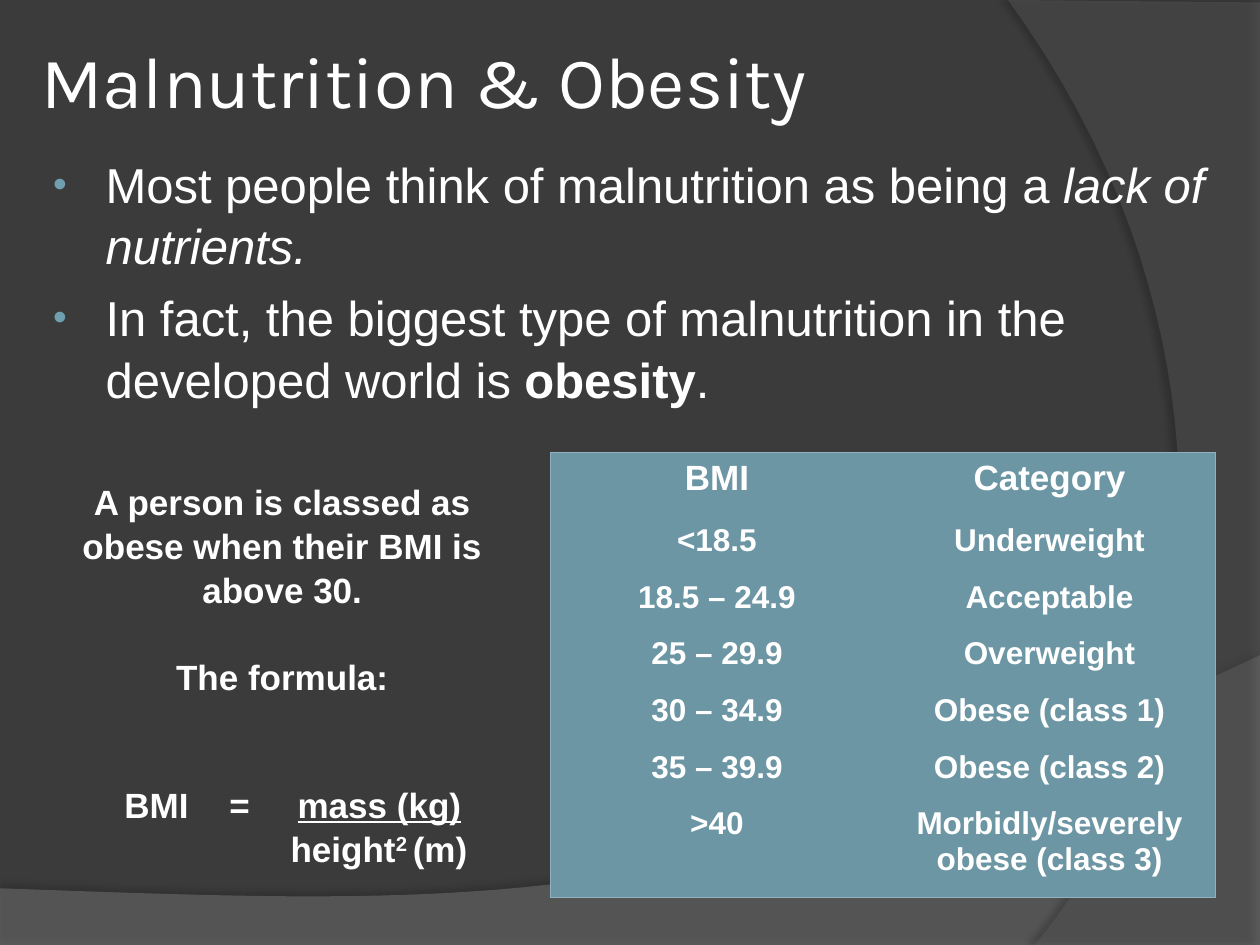
import lxml.etree
import pptx
import pptx.dml.color
import pptx.enum.text
import pptx.oxml
import pptx.oxml.ns
import pptx.util

Pt = pptx.util.Pt
ALIGN = pptx.enum.text.PP_ALIGN
ANCHOR = pptx.enum.text.MSO_ANCHOR
NAMESPACE = pptx.oxml.ns.nsdecls("a")

COLORS = {
    "background": "3B3B3B",
    "wave": "7F7F7F",
    "arc": "5E5E5E",
    "shadow": "000000",
    "text": "FFFFFF",
    "bullet": "6EA0B0",
    "table": "6C96A4",
    "border": "90B2C0",
}


def rgb(name):
    return pptx.dml.color.RGBColor.from_string(COLORS[name])


def add_text(paragraph, text, size=20, font="Arial", bold=False, italic=False,
             underline=False, baseline=None):
    run = paragraph.add_run()
    run.text = text
    run.font.size = Pt(size)
    run.font.name = font
    run.font.bold = bold
    run.font.italic = italic
    run.font.underline = underline
    run.font.color.rgb = rgb("text")
    if baseline:
        run.font._element.set("baseline", str(baseline))


presentation = pptx.Presentation()
presentation.slide_width, presentation.slide_height = Pt(720), Pt(540)
slide = presentation.slides.add_slide(presentation.slide_layouts[1])
slide.background.fill.solid()
slide.background.fill.fore_color.rgb = rgb("background")

# Background curves: straight corners, then one Bezier back to the start.
# Each has colour, opacity, corners, control points, end, and shadow
# (opacity, blur, distance, direction).
curves = [
    ("wave", 45, [(0, 507.6), (0, 540.72), (720, 540.72), (720, 374.4)],
     [(402.48, 524.88), (281.52, 517.68)], (0, 507.6), (35, 4, 3.5, 270)),
    ("arc", 40, [(720, 1.44), (720, 540), (591.12, 540)],
     [(673.2, 445.68), (732.96, 216)], (576, 0), (45, 4, 4, 180)),
]
STEPS = 40
for index, (color, opacity, corners, controls, end, shadow) in enumerate(curves):
    bezier = [corners[-1], *controls, end]
    points = list(corners[1:])
    for step in range(1, STEPS + 1):
        t = step / STEPS
        weights = [(1 - t) ** 3, 3 * t * (1 - t) ** 2, 3 * t ** 2 * (1 - t), t ** 3]
        points.append(tuple(sum(w * p[axis] for w, p in zip(weights, bezier))
                            for axis in (0, 1)))
    builder = slide.shapes.build_freeform(Pt(corners[0][0]), Pt(corners[0][1]))
    builder.add_line_segments([(Pt(x), Pt(y)) for x, y in points], close=True)
    shape = builder.convert_to_shape()
    shape.fill.solid()
    shape.fill.fore_color.rgb = rgb(color)
    shape.line.fill.background()
    fill_color = shape.element.spPr.find(".//" + pptx.oxml.ns.qn("a:srgbClr"))
    lxml.etree.SubElement(fill_color, pptx.oxml.ns.qn("a:alpha"), val=str(opacity * 1000))
    shadow_opacity, blur, distance, direction = shadow
    shape.element.spPr.append(pptx.oxml.parse_xml(
        f'<a:effectLst {NAMESPACE}><a:outerShdw blurRad="{Pt(blur)}" dist="{Pt(distance)}" '
        f'dir="{direction * 60000}" algn="ctr" rotWithShape="0">'
        f'<a:srgbClr val="{COLORS["shadow"]}"><a:alpha val="{shadow_opacity * 1000}"/>'
        f'</a:srgbClr></a:outerShdw></a:effectLst>'))
    slide.shapes.element.insert(2 + index, shape.element)

# Title
title = slide.shapes.title
title.left, title.top, title.width, title.height = Pt(20.16), Pt(15.12), Pt(680.4), Pt(61.2)
frame = title.text_frame
frame.auto_size = pptx.enum.text.MSO_AUTO_SIZE.NONE
frame.vertical_anchor = ANCHOR.MIDDLE
frame.margin_left = frame.margin_right = frame.margin_top = frame.margin_bottom = Pt(3.6)
frame.paragraphs[0].alignment = ALIGN.LEFT
add_text(frame.paragraphs[0], "Malnutrition & Obesity", size=41.4, font="Karla")

# Bulleted list
body = slide.placeholders[1]
body.left, body.top, body.width, body.height = Pt(20.16), Pt(82.8), Pt(680.4), Pt(442.08)
body.text_frame.auto_size = pptx.enum.text.MSO_AUTO_SIZE.NONE
bullets = [
    [("Most people think of malnutrition as being a ", {}),
     ("lack of nutrients.", {"italic": True})],
    [("In fact, the biggest type of malnutrition in the developed world is ", {}),
     ("obesity", {"bold": True}), (".", {})],
]
for index, runs in enumerate(bullets):
    paragraph = (body.text_frame.add_paragraph() if index
                 else body.text_frame.paragraphs[0])
    paragraph.space_before = Pt(5.6)
    paragraph.line_spacing = 1.05
    properties = paragraph._p.get_or_add_pPr()
    properties.set("marL", str(Pt(33)))
    properties.set("indent", str(Pt(-30)))
    for xml in (f'<a:buClr {NAMESPACE}><a:srgbClr val="{COLORS["bullet"]}"/></a:buClr>',
                f'<a:buSzPct {NAMESPACE} val="80000"/>',
                f'<a:buFont {NAMESPACE} typeface="Arial"/>',
                f'<a:buChar {NAMESPACE} char="•"/>'):
        properties.append(pptx.oxml.parse_xml(xml))
    for text, style in runs:
        add_text(paragraph, text, size=28, **style)

# BMI table with an outer border only
rows = [
    ("BMI", "Category"),
    ("<18.5", "Underweight"),
    ("18.5 – 24.9", "Acceptable"),
    ("25 – 29.9", "Overweight"),
    ("30 – 34.9", "Obese (class 1)"),
    ("35 – 39.9", "Obese (class 2)"),
    (">40", "Morbidly/severely obese (class 3)"),
]
heights = [36.72] + [32.4] * 5 + [55.44]
table = slide.shapes.add_table(len(rows), 2, Pt(314.64), Pt(258.48),
                               Pt(380.16), Pt(sum(heights))).table
table.first_row = table.horz_banding = False
for row, (texts, height) in enumerate(zip(rows, heights)):
    table.rows[row].height = Pt(height)
    for column, text in enumerate(texts):
        cell = table.cell(row, column)
        paragraph = cell.text_frame.paragraphs[0]
        paragraph.alignment = ALIGN.CENTER
        size = 18 if row else 20
        paragraph.space_before = Pt(size * 0.2)
        add_text(paragraph, text, size=size, bold=True)
        outer = {"lnL": column == 0, "lnR": column == 1,
                 "lnT": row == 0, "lnB": row == len(rows) - 1}
        for side, visible in outer.items():
            fill = (f'<a:solidFill><a:srgbClr val="{COLORS["border"]}"/></a:solidFill>'
                    if visible else "<a:noFill/>")
            cell._tc.get_or_add_tcPr().append(pptx.oxml.parse_xml(
                f'<a:{side} {NAMESPACE} w="{Pt(0.75)}">{fill}</a:{side}>'))
        cell.fill.solid()
        cell.fill.fore_color.rgb = rgb("table")

# Explanation and formula: runs, space before, left margin, tab stops
text_box = slide.shapes.add_textbox(Pt(30.96), Pt(270), Pt(260.64), Pt(225.36))
frame = text_box.text_frame
frame.word_wrap = True
lines = [
    ([("A person is classed as obese when their BMI is above 30.", {})], 0, None, []),
    ([("The formula:", {})], 24, None, []),
    ([("\tBMI\t=\t", {}), ("mass (kg)", {"underline": True})], 48, 0, [33, 93, 132]),
    ([("height", {}), ("2 ", {"baseline": 30000}), ("(m)", {})], 0, 128, []),
]
for index, (runs, space, margin, tabs) in enumerate(lines):
    paragraph = frame.add_paragraph() if index else frame.paragraphs[0]
    paragraph.alignment = ALIGN.CENTER if margin is None else ALIGN.LEFT
    paragraph.line_spacing = 1.05
    paragraph.space_before = Pt(space)
    properties = paragraph._p.get_or_add_pPr()
    properties.set("marL", str(Pt(margin or 0)))
    if tabs:
        stops = "".join(f'<a:tab pos="{Pt(tab)}" algn="l"/>' for tab in tabs)
        properties.append(pptx.oxml.parse_xml(f"<a:tabLst {NAMESPACE}>{stops}</a:tabLst>"))
    for text, style in runs:
        add_text(paragraph, text, bold=True, **style)

presentation.save("out.pptx")
